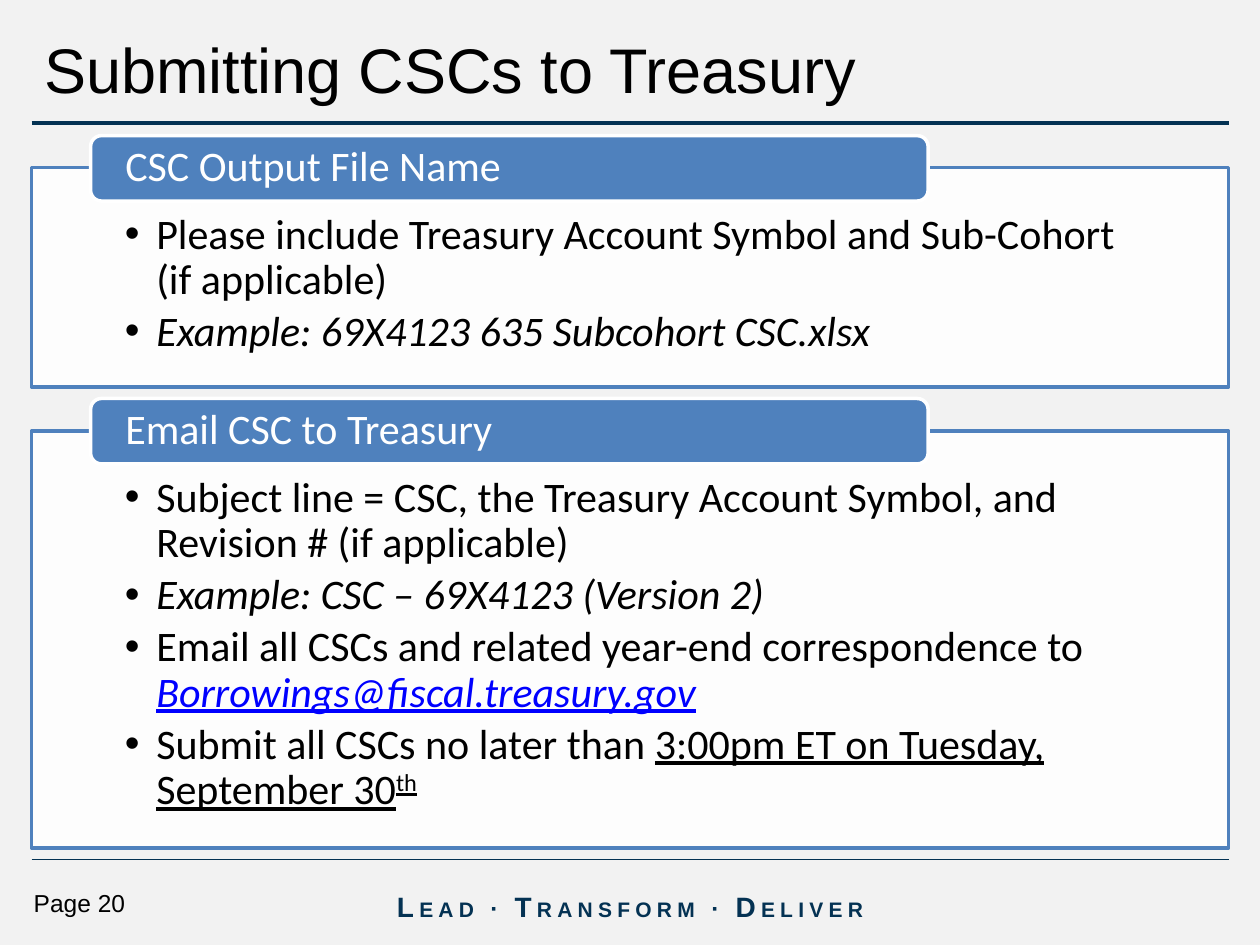
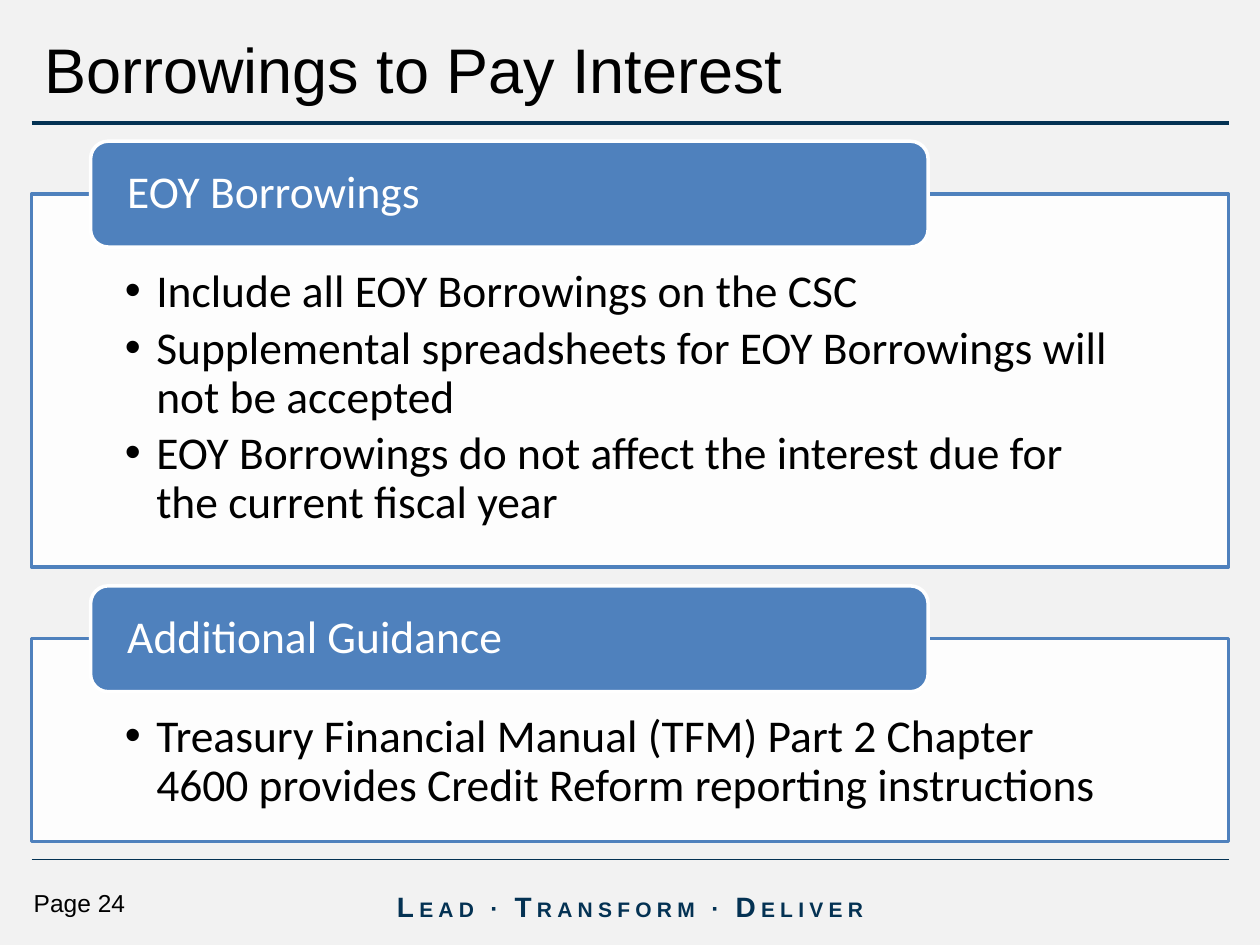
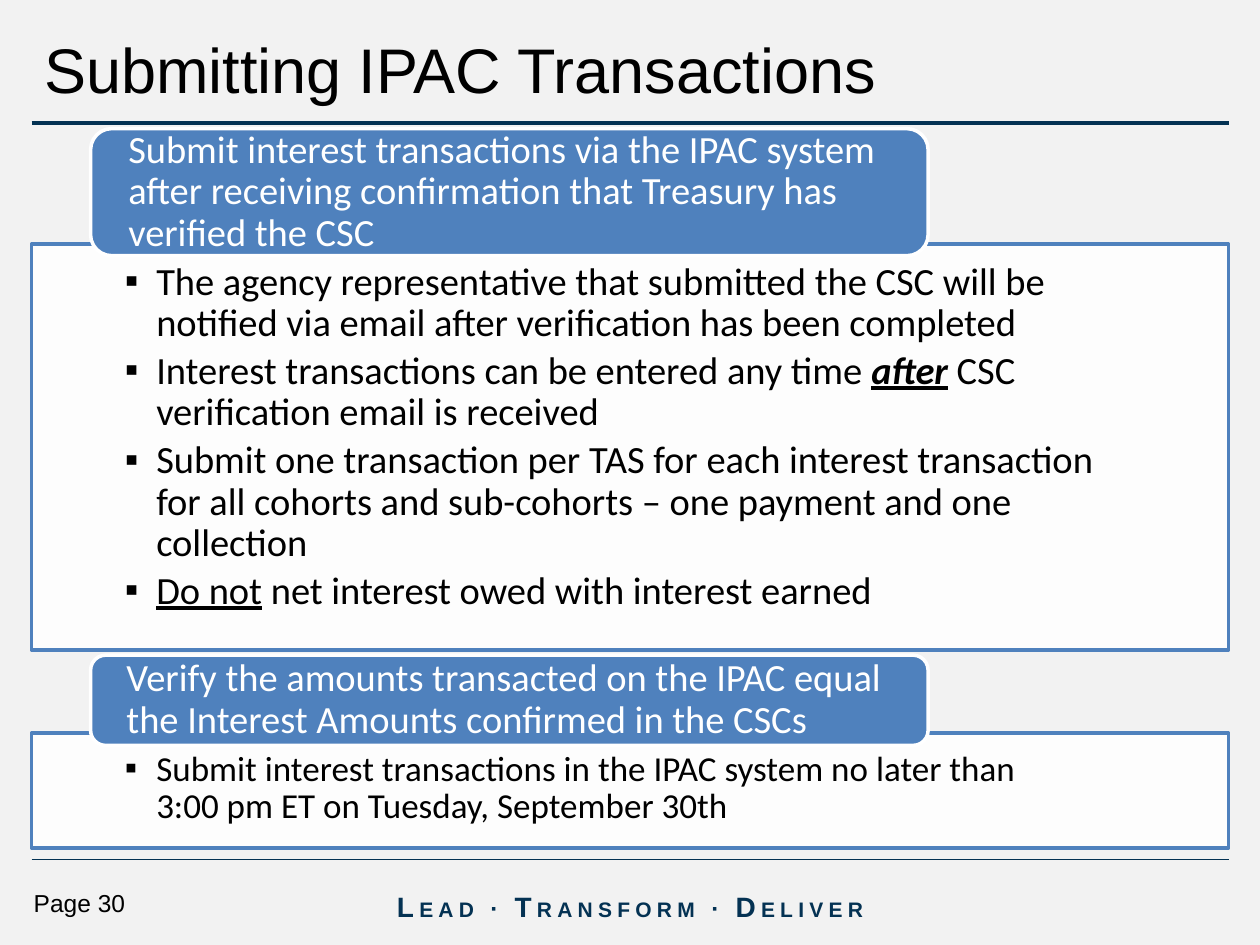
from lxml.etree import SubElement
from pptx import Presentation
from pptx.dml.color import RGBColor
from pptx.enum.shapes import MSO_CONNECTOR as CONN, MSO_SHAPE as SHAPE
from pptx.enum.text import MSO_ANCHOR as ANCHOR, MSO_AUTO_SIZE as AUTO, PP_ALIGN as ALIGN
from pptx.oxml.ns import qn
from pptx.util import Pt

COLORS = {"bg": "F2F2F2", "navy": "043253", "blue": "4F81BD",
          "white": "FFFFFF", "black": "000000", "link": "0000FF"}
HEAD, BODY = "Arial", "Calibri"
LEFT, WIDTH = 18, 684
TAB_LEFT, TAB_WIDTH = 51.8, 478.6
TWO_CONTENT = 3
MOTTO = [("L", 16), ("EAD ", 12), ("∙ ", 14), ("T", 16), ("RANSFORM ", 12),
         ("∙ ", 14), ("D", 16), ("ELIVER", 12)]

SLIDES = [
    {"title": "Submitting CSCs to Treasury", "page": 20, "bullet": "•", "inset": 25.9,
     "panels": [
         {"tab": "CSC Output File Name", "tab_box": (77.5, 37.4), "box": (95.8, 125.3),
          "sizes": (24, 24), "items": [
              "Please include Treasury Account Symbol and Sub-Cohort (if applicable)",
              [("Example: 69X4123 635 Subcohort CSC.xlsx", "italic")]]},
         {"tab": "Email CSC to Treasury", "tab_box": (227.7, 37.4), "box": (246.2, 238.4),
          "sizes": (24, 24), "items": [
              "Subject line = CSC, the Treasury Account Symbol, and Revision # (if applicable)",
              [("Example: CSC – 69X4123 (Version 2)", "italic")],
              [("Email all CSCs and related year-end correspondence to ", ""),
               ("Borrowings@fiscal.treasury.gov", "italic underline link")],
              [("Submit all CSCs no later than ", ""),
               ("3:00pm ET on Tuesday, September 30", "underline"),
               ("th", "underline super")]]}]},
    {"title": "Borrowings to Pay Interest", "page": 24, "bullet": "•", "inset": 42.5,
     "panels": [
         {"tab": "EOY Borrowings", "tab_box": (80.7, 60.5), "box": (110.9, 213),
          "sizes": (26, 26), "items": [
              "Include all EOY Borrowings on the CSC",
              "Supplemental spreadsheets for EOY Borrowings will not be accepted",
              "EOY Borrowings do not affect the interest due for the current fiscal year"]},
         {"tab": "Additional Guidance", "tab_box": (334.8, 60.5), "box": (365, 116),
          "sizes": (26, 26), "items": [
              "Treasury Financial Manual (TFM) Part 2 Chapter 4600 provides "
              "Credit Reform reporting instructions"]}]},
    {"title": "Submitting IPAC Transactions", "page": 30, "bullet": "▪", "inset": 10.1,
     "panels": [
         {"tab": "Submit interest transactions via the IPAC system after receiving "
                 "confirmation that Treasury has verified the CSC",
          "tab_box": (73.5, 72.6), "box": (139.5, 232),
          "sizes": (22, 22), "items": [
              "The agency representative that submitted the CSC will be notified "
              "via email after verification has been completed",
              [("Interest transactions can be entered any time ", ""),
               ("after", "bold italic underline"),
               (" CSC verification email is received", "")],
              "Submit one transaction per TAS for each interest transaction for all "
              "cohorts and sub-cohorts – one payment and one collection",
              [("Do not", "underline"), (" net interest owed with interest earned", "")]]},
         {"tab": "Verify the amounts transacted on the IPAC equal the Interest Amounts "
                 "confirmed in the CSCs",
          "tab_box": (374.4, 51.6), "box": (419, 65.6),
          "sizes": (22, 20), "items": [
              "Submit interest transactions in the IPAC system no later than\n"
              "3:00 pm ET on Tuesday, September 30th"]}]},
]


def rgb(name):
    return RGBColor.from_string(COLORS[name])


def place(sp, left, top, width, height):
    sp.left, sp.top, sp.width, sp.height = Pt(left), Pt(top), Pt(width), Pt(height)


def paint(sp, fill, line):
    sp.fill.solid()
    sp.fill.fore_color.rgb = rgb(fill)
    sp.line.color.rgb = rgb(line)
    sp.line.width = Pt(2)


def set_frame(tf, anchor, left, top):
    tf.word_wrap = True
    tf.auto_size = AUTO.NONE
    tf.vertical_anchor = anchor
    tf.margin_left = tf.margin_right = Pt(left)
    tf.margin_top = tf.margin_bottom = Pt(top)


def style(p, size, font, color):
    for r in p.runs:
        r.font.size, r.font.name = Pt(size), font
        r.font.color.rgb = rgb(color)


def emphasize(r, marks):
    for mark in marks.split():
        if mark == "link":
            r.font.color.rgb = rgb("link")
        elif mark == "super":
            r._r.get_or_add_rPr().set("baseline", "30000")
        else:
            setattr(r.font, mark, True)


def add_bullet(p, char):
    pPr = p._p.get_or_add_pPr()
    pPr.set("marL", str(Pt(18)))
    pPr.set("indent", str(-Pt(18)))
    SubElement(pPr, qn("a:buFont")).set("typeface", HEAD)
    SubElement(pPr, qn("a:buChar")).set("char", char)


def add_rule(slide, y, weight):
    ln = slide.shapes.add_connector(CONN.STRAIGHT, Pt(LEFT), Pt(y), Pt(LEFT + WIDTH), Pt(y))
    ln.line.color.rgb = rgb("navy")
    ln.line.width = Pt(weight)
    SubElement(ln._element.spPr, qn("a:effectLst"))


def add_text(slide, left, top, width, height, anchor):
    sp = slide.shapes.add_textbox(Pt(left), Pt(top), Pt(width), Pt(height))
    set_frame(sp.text_frame, anchor, 7.2, 3.6)
    return sp.text_frame.paragraphs[0]


def add_frame(slide, title, page):
    slide.background.fill.solid()
    slide.background.fill.fore_color.rgb = rgb("bg")
    sp = slide.shapes.title
    place(sp, LEFT, 12.2, WIDTH, 54)
    sp.text_frame.text = title
    set_frame(sp.text_frame, ANCHOR.MIDDLE, 7.2, 3.6)
    p = sp.text_frame.paragraphs[0]
    p.alignment = ALIGN.LEFT
    style(p, 36, HEAD, "black")

    add_rule(slide, 70.5, 2.25)
    add_rule(slide, 491, 0.75)

    p = add_text(slide, 12.2, 504, 90, 24, ANCHOR.TOP)
    p.text = f"Page {page}"
    style(p, 14, HEAD, "black")

    p = add_text(slide, 203.8, 503.3, 312.5, 28.8, ANCHOR.MIDDLE)
    p.alignment = ALIGN.CENTER
    for text, _ in MOTTO:
        p.add_run().text = text
    style(p, 16, HEAD, "navy")
    for r, (_, size) in zip(p.runs, MOTTO):
        r.font.size = Pt(size)
        r.font.bold = True
        r._r.get_or_add_rPr().set("spc", "300")


def fill_list(sp, box, items, size, bullet, inset):
    place(sp, LEFT, box[0], WIDTH, box[1])
    paint(sp, "white", "blue")
    clr = sp._element.spPr.find(f"{qn('a:solidFill')}/{qn('a:srgbClr')}")
    SubElement(clr, qn("a:alpha")).set("val", "90000")
    tf = sp.text_frame
    set_frame(tf, ANCHOR.TOP, 53.3, inset)
    tf.margin_bottom = Pt(12)
    for i, item in enumerate(items):
        p = tf.add_paragraph() if i else tf.paragraphs[0]
        add_bullet(p, bullet)
        p.line_spacing = 0.9
        p.space_before, p.space_after = Pt(0), Pt(round(size * 0.16, 1))
        if isinstance(item, str):
            p.text = item
            style(p, size, BODY, "black")
            continue
        for text, _ in item:
            p.add_run().text = text
        style(p, size, BODY, "black")
        for r, (_, marks) in zip(p.runs, item):
            emphasize(r, marks)


def add_tab(slide, text, top, height, size):
    sp = slide.shapes.add_shape(SHAPE.ROUNDED_RECTANGLE, Pt(TAB_LEFT), Pt(top),
                                Pt(TAB_WIDTH), Pt(height))
    sp.shadow.inherit = False
    paint(sp, "blue", "white")
    sp.text_frame.text = text
    set_frame(sp.text_frame, ANCHOR.MIDDLE, 18, 0)
    p = sp.text_frame.paragraphs[0]
    p.alignment = ALIGN.LEFT
    p.line_spacing = 0.9
    style(p, size, BODY, "white")


def main():
    prs = Presentation()
    prs.slide_width, prs.slide_height = Pt(720), Pt(540)
    for data in SLIDES:
        slide = prs.slides.add_slide(prs.slide_layouts[TWO_CONTENT])
        add_frame(slide, data["title"], data["page"])
        for idx, panel in enumerate(data["panels"], 1):
            tab_size, list_size = panel["sizes"]
            fill_list(slide.placeholders[idx], panel["box"], panel["items"],
                      list_size, data["bullet"], data["inset"])
            add_tab(slide, panel["tab"], *panel["tab_box"], tab_size)
    prs.save("out.pptx")


if __name__ == "__main__":
    main()
